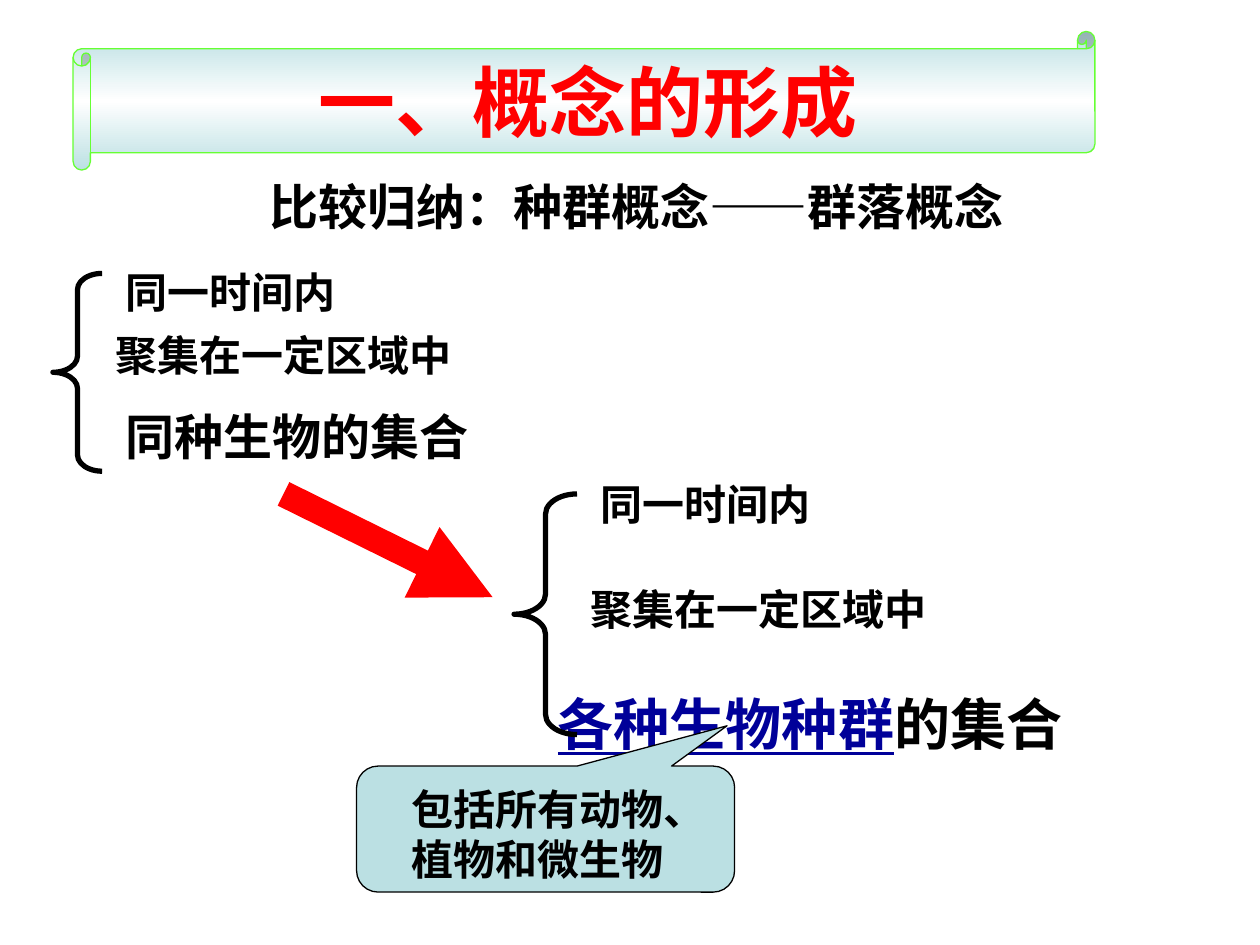
from copy import deepcopy

from pptx import Presentation
from pptx.dml.color import RGBColor
from pptx.enum.shapes import MSO_CONNECTOR as Connector, MSO_SHAPE as Shape
from pptx.enum.text import MSO_ANCHOR as Anchor, PP_ALIGN as Align
from pptx.oxml.ns import qn
from pptx.oxml.xmlchemy import OxmlElement
from pptx.util import Inches, Pt

BLACK, RED, NAVY = "000000", "FF0000", "000099"
TEAL, WHITE, GREEN = "BBE0E3", "FFFFFF", "66FF33"


def color(hex_string):
    return RGBColor.from_string(hex_string)


class SlideBuilder:
    font_name = "Arial"

    def __init__(self, slide):
        self.slide = slide

    def style(self, font, size, hex_string):
        font.name = self.font_name
        font.size = Pt(size)
        font.bold = True
        font.color.rgb = color(hex_string)

    def fill_text(self, frame, lines, size, hex_string=BLACK, align=Align.LEFT, wrap=True):
        frame.word_wrap = wrap
        for index, line in enumerate(lines):
            paragraph = frame.add_paragraph() if index else frame.paragraphs[0]
            paragraph.text = line
            paragraph.alignment = align
            self.style(paragraph.font, size, hex_string)

    def text(self, left, top, width, height, *lines, size=24, **options):
        box = self.slide.shapes.add_textbox(
            Inches(left), Inches(top), Inches(width), Inches(height))
        self.fill_text(box.text_frame, lines, size, **options)
        return box.text_frame

    def shape(self, kind, left, top, width, height, adjustments,
              line=BLACK, line_width=0.75, fill=None):
        shape = self.slide.shapes.add_shape(
            kind, Inches(left), Inches(top), Inches(width), Inches(height))
        shape.shadow.inherit = False
        for index, value in enumerate(adjustments):
            shape.adjustments[index] = value
        shape.line.color.rgb = color(line)
        shape.line.width = Pt(line_width)
        if fill:
            shape.fill.solid()
            shape.fill.fore_color.rgb = color(fill)
        else:
            shape.fill.background()
        return shape

    def gradient(self, shape, *colors):
        """Fill top to bottom with evenly spaced colours."""
        fill = shape.fill
        fill.gradient()
        fill.gradient_angle = 90
        stop_list = shape._element.spPr.find(".//" + qn("a:gsLst"))
        while len(stop_list) < len(colors):
            stop_list.append(deepcopy(stop_list[0]))
        for index, (stop, hex_string) in enumerate(zip(fill.gradient_stops, colors)):
            stop.position = index / (len(colors) - 1)
            stop.color.rgb = color(hex_string)

    def arrow(self, start, end, hex_string, width):
        connector = self.slide.shapes.add_connector(
            Connector.STRAIGHT, *map(Inches, start + end))
        connector.line.color.rgb = color(hex_string)
        connector.line.width = Pt(width)
        head = OxmlElement("a:tailEnd")
        head.set("type", "triangle")
        connector.line._get_or_add_ln().append(head)
        connector._element.spPr.append(OxmlElement("a:effectLst"))

    def conditions(self, time_at, area_at):
        """Time and area conditions shared by both concepts."""
        self.text(*time_at, 2.44, 0.5, "同一时间内")
        self.text(*area_at, 2.88, 0.5, "聚集在一定区域中", align=Align.CENTER, wrap=False)


def main():
    presentation = Presentation()
    presentation.slide_width, presentation.slide_height = Inches(10), Inches(7.5)
    slide = presentation.slides.add_slide(presentation.slide_layouts[6])
    builder = SlideBuilder(slide)

    # Subtitle
    builder.text(0.81, 1.35, 8.48, 0.57, "比较归纳：种群概念——群落概念",
                 size=28, align=Align.CENTER)

    # Population concept
    builder.conditions((0.9, 2.07), (0.81, 2.57))
    builder.text(0.9, 3.18, 4.1, 0.57, "同种生物的集合", size=28)
    builder.shape(Shape.LEFT_BRACE, 0.42, 2.17, 0.39, 1.57, (0.33, 0.5), line_width=3)

    # Community concept
    builder.conditions((4.67, 3.75), (4.58, 4.58))
    frame = builder.text(4.33, 5.42, 5.33, 0.63, "各种生物种群", size=32)
    paragraph = frame.paragraphs[0]
    paragraph.space_before = Pt(6.4)
    key_words = paragraph.runs[0]
    key_words.font.underline = True
    key_words.font.color.rgb = color(NAVY)
    paragraph.add_run().text = "的集合"
    builder.shape(Shape.LEFT_BRACE, 4.08, 3.92, 0.5, 1.91, (0.32, 0.5), line_width=3)

    # Arrow from population to community
    builder.arrow((2.25, 3.92), (3.91, 4.74), RED, 15)

    # Callout
    callout = builder.shape(Shape.ROUNDED_RECTANGULAR_CALLOUT, 2.83, 6.08, 3, 1,
                            (-0.48, 0.82, 0.17), fill=TEAL)
    callout.rotation = 180
    builder.text(3.17, 6.17, 2.53, 0.9, "包括所有动物、", "植物和微生物", wrap=False)

    # Title scroll
    scroll = builder.shape(Shape.HORIZONTAL_SCROLL, 0.58, 0.25, 8.11, 1.1, (0.125,),
                           line=GREEN)
    builder.gradient(scroll, TEAL, WHITE, TEAL)
    scroll.text_frame.vertical_anchor = Anchor.MIDDLE
    builder.fill_text(scroll.text_frame, ["一、概念的形成"], 44, RED, Align.CENTER, wrap=False)

    presentation.save("out.pptx")


if __name__ == "__main__":
    main()
